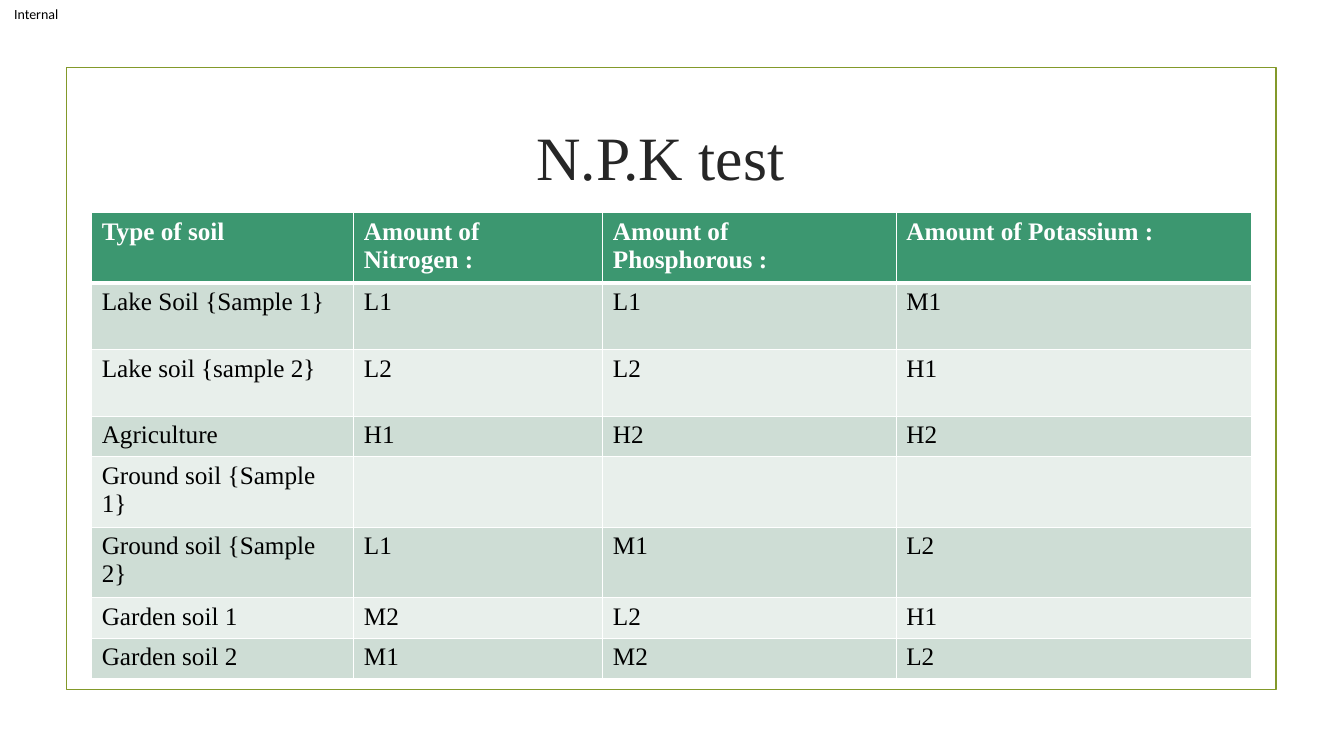
import pptx
import pptx.util
import pptx.dml.color
import pptx.enum.text
import pptx.enum.shapes
import pptx.oxml
import pptx.oxml.ns

Inches = pptx.util.Inches
Pt = pptx.util.Pt
TEXT = pptx.enum.text

HUES = {
    "frame": "83992A",
    "title": "262626",
    "head": "3C9770",
    "odd": "CEDDD5",
    "even": "E8EFEB",
    "white": "FFFFFF",
    "black": "000000",
}
WIDTHS = [2.6, 2.47, 2.91, 3.52]
TALL, SHORT = 0.66, 0.38
HEIGHTS = [TALL, TALL, TALL, SHORT, TALL, TALL, SHORT, SHORT]
SOILS = [
    ["Type of soil", "Amount of Nitrogen :", "Amount of Phosphorous :", "Amount of Potassium :"],
    ["Lake Soil {Sample 1}", "L1", "L1", "M1"],
    ["Lake soil {sample 2}", "L2", "L2", "H1"],
    ["Agriculture", "H1", "H2", "H2"],
    ["Ground soil {Sample 1}", "", "", ""],
    ["Ground soil {Sample 2}", "L1", "M1", "L2"],
    ["Garden soil 1", "M2", "L2", "H1"],
    ["Garden soil 2", "M1", "M2", "L2"],
]


def color(name):
    return pptx.dml.color.RGBColor.from_string(HUES[name])


def assign(item, values):
    for name, value in values.items():
        setattr(item, name, value)


class Deck:
    def __init__(self, font):
        self.font = font
        self.show = pptx.Presentation()
        assign(self.show, {"slide_width": Inches(13.33), "slide_height": Inches(7.5)})
        self.slide = self.show.slides.add_slide(self.show.slide_layouts[5])

    def letter(self, frame, text, size, hue, bold=False, font=None):
        if not text:
            return
        run = frame.paragraphs[0].add_run()
        run.text = text
        assign(run.font, {"name": font or self.font, "size": Pt(size), "bold": bold})
        run.font.color.rgb = color(hue)

    def place(self, item, box):
        names = ["left", "top", "width", "height"]
        assign(item, dict(zip(names, map(Inches, box))))

    def title(self, text, box):
        title = self.slide.shapes.title
        self.place(title, box)
        assign(title.text_frame, {
            "word_wrap": True,
            "vertical_anchor": TEXT.MSO_ANCHOR.MIDDLE,
            "auto_size": TEXT.MSO_AUTO_SIZE.NONE,
        })
        self.letter(title.text_frame, text, 44, "title")
        title.text_frame.paragraphs[0].alignment = TEXT.PP_ALIGN.CENTER

    def border(self, box):
        kind = pptx.enum.shapes.MSO_SHAPE.RECTANGLE
        shape = self.slide.shapes.add_shape(kind, *map(Inches, box))
        shape.shadow.inherit = False
        shape.fill.background()
        shape.line.color.rgb = color("frame")
        shape.line.width = Pt(1.25)

    def label(self, text, box):
        frame = self.slide.shapes.add_textbox(*map(Inches, box)).text_frame
        assign(frame, {
            "word_wrap": False,
            "vertical_anchor": TEXT.MSO_ANCHOR.MIDDLE,
            "margin_left": Inches(0.14),
            "margin_right": 0,
            "margin_top": 0,
            "margin_bottom": 0,
        })
        self.letter(frame, text, 10, "black", font="Calibri")

    def edge(self, cell, side, width):
        space = pptx.oxml.ns.nsdecls("a")
        line = pptx.oxml.parse_xml(
            f'<a:ln{side} {space} w="{Pt(width)}"><a:solidFill>'
            f'<a:srgbClr val="{HUES["white"]}"/></a:solidFill></a:ln{side}>'
        )
        cell._tc.get_or_add_tcPr().append(line)

    def table(self, rows, widths, heights, left, top):
        box = [left, top, sum(widths), sum(heights)]
        grid = self.slide.shapes.add_table(len(rows), len(widths), *map(Inches, box)).table
        for col, width in zip(grid.columns, widths):
            col.width = Inches(width)
        for i, (row, height) in enumerate(zip(rows, heights)):
            grid.rows[i].height = Inches(height)
            head = i == 0
            fill = "head" if head else "odd" if i % 2 else "even"
            for j, text in enumerate(row):
                cell = grid.cell(i, j)
                for side in "LRTB":
                    thick = (head and side == "B") or (i == 1 and side == "T")
                    self.edge(cell, side, 3 if thick else 1)
                cell.fill.solid()
                cell.fill.fore_color.rgb = color(fill)
                self.letter(cell.text_frame, text, 18, "white" if head else "black", head)


def main():
    deck = Deck("Times New Roman")
    deck.border([0.66, 0.67, 12, 6.17])
    deck.label("Internal", [0, 0, 0.73, 0.28])
    deck.title("N.P.K test", [1.3, 0.83, 10.5, 1.43])
    deck.table(SOILS, WIDTHS, HEIGHTS, 0.91, 2.11)
    deck.show.save("out.pptx")


if __name__ == "__main__":
    main()
